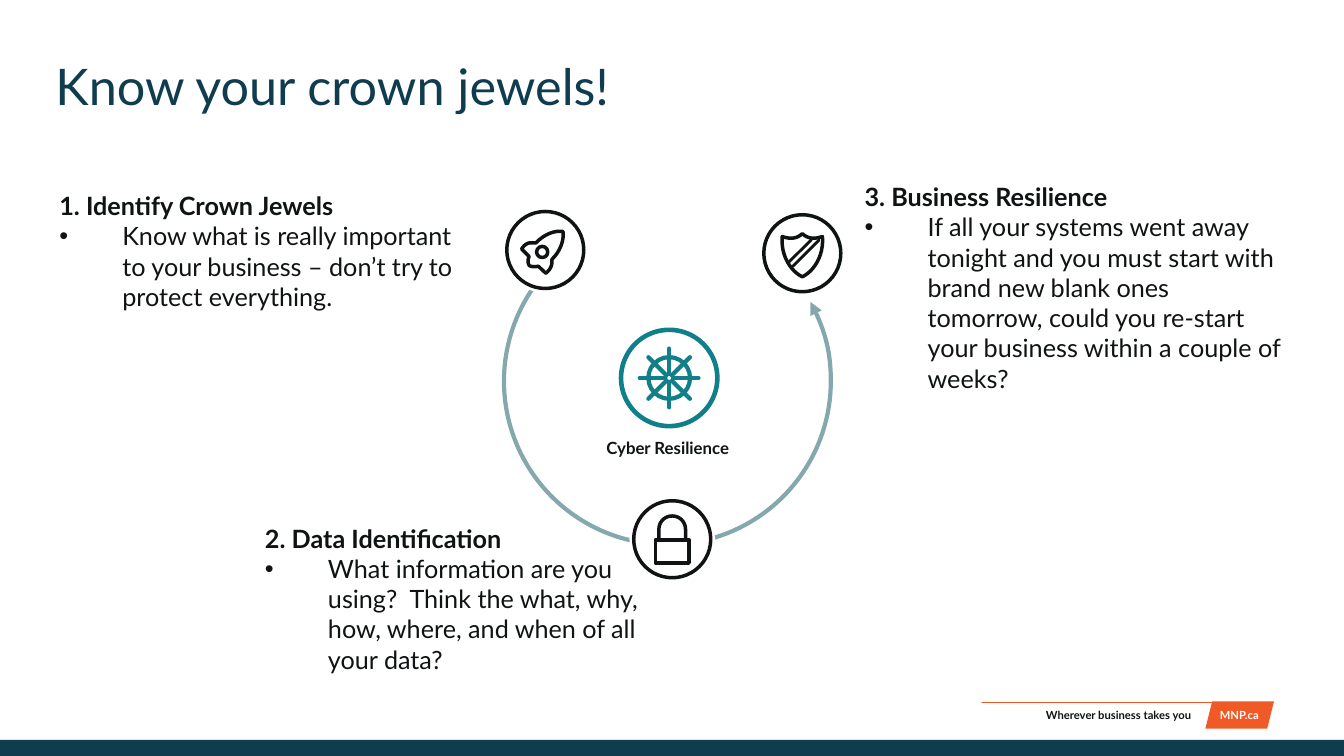
"""Builds the slide "Know your crown jewels!" with its cyber resilience cycle."""
import math

import lxml.etree
import pptx
import pptx.dml.color
import pptx.enum.shapes
import pptx.enum.text
import pptx.oxml.ns
import pptx.util

Pt = pptx.util.Pt
qn = pptx.oxml.ns.qn
SHAPE = pptx.enum.shapes.MSO_SHAPE
STRAIGHT = pptx.enum.shapes.MSO_CONNECTOR.STRAIGHT
ALIGN = pptx.enum.text.PP_ALIGN

NAVY = pptx.dml.color.RGBColor(0x0F, 0x3C, 0x4F)
INK = pptx.dml.color.RGBColor(0x0F, 0x13, 0x13)
ORANGE = pptx.dml.color.RGBColor(0xEF, 0x5A, 0x27)
TEAL = pptx.dml.color.RGBColor(0x10, 0x7F, 0x8A)
MIST = pptx.dml.color.RGBColor(0x85, 0xA8, 0xAE)
WHITE = pptx.dml.color.RGBColor(0xFF, 0xFF, 0xFF)

deck = pptx.Presentation()
deck.slide_width, deck.slide_height = Pt(960), Pt(540)
slide = deck.slides.add_slide(deck.slide_layouts[6])
shapes = slide.shapes


def paint(shape, fill=None, line=None, width=1):
    """Set fill and a round-capped line, and remove the shadow."""
    if hasattr(shape, "fill"):
        if fill is None:
            shape.fill.background()
        else:
            shape.fill.solid()
            shape.fill.fore_color.rgb = fill
    properties = shape._element.spPr
    if line is None:
        shape.line.fill.background()
    else:
        shape.line.color.rgb = line
        shape.line.width = Pt(width)
        outline = properties.find(qn("a:ln"))
        outline.set("cap", "rnd")
        lxml.etree.SubElement(outline, qn("a:round"))
    lxml.etree.SubElement(properties, qn("a:effectLst"))


def write(place, paragraphs, insets=(0, 0), align=ALIGN.LEFT, **font):
    """Add a text box; return its paragraphs."""
    frame = shapes.add_textbox(*map(Pt, place)).text_frame
    side, top = map(Pt, insets)
    layout = {"word_wrap": True, "margin_left": side, "margin_right": side,
              "margin_top": top, "margin_bottom": top}
    for name, value in layout.items():
        setattr(frame, name, value)
    frame.text = "\n".join(paragraphs)
    for paragraph in frame.paragraphs:
        paragraph.alignment = align
        run_font = paragraph.runs[0].font
        run_font.name = "Lato"
        run_font.color.rgb = font.get("color", INK)
        run_font.size = Pt(font["size"])
        run_font.bold = font.get("bold", False)
    return frame.paragraphs


site_tab = shapes.add_shape(SHAPE.PARALLELOGRAM, Pt(861), Pt(501), Pt(49), Pt(19.5))
paint(site_tab, ORANGE)
write((864, 502.5, 42.5, 17), ["MNP.ca"], (0, 3.6), ALIGN.CENTER,
      size=8, bold=True, color=WHITE)
footer_rule = shapes.add_connector(STRAIGHT, Pt(701.5), Pt(501.6), Pt(908.5), Pt(501.6))
paint(footer_rule, line=ORANGE)
write((703, 502.5, 148, 17), ["Wherever business takes you"], (0, 3.6), ALIGN.RIGHT,
      size=8, bold=True)
footer_bar = shapes.add_shape(SHAPE.RECTANGLE, 0, Pt(528.5), Pt(960), Pt(11.5))
paint(footer_bar, NAVY)

title = write((39.6, 44, 859, 44), ["Know your crown jewels!"], size=36, color=NAVY)
title[0].line_spacing = 0.9

cycle = shapes.add_shape(SHAPE.ARC, Pt(360), Pt(155.5), Pt(233.5), Pt(233.5))
for index, degrees in enumerate((331, 215)):
    cycle.adjustments[index] = degrees * 0.6
paint(cycle, line=MIST, width=3)
lxml.etree.SubElement(cycle._element.spPr.find(qn("a:ln")), qn("a:headEnd"), type="triangle")

ROCKET, SHIELD, LOCK, HELM = (389.5, 178.6), (573.1, 180.9), (480.2, 385.2), (478, 270)

discs = [(center, diameter, fill, line, width)
         for center in (ROCKET, SHIELD, LOCK)
         for diameter, fill, line, width in ((61.2, WHITE, None, 0), (55, None, INK, 2.5))]
discs += [
    ((ROCKET[0] - 2.2, ROCKET[1] + 1.4), 8, None, INK, 2.5),
    (HELM, 68.8, None, TEAL, 3.3),
    (HELM, 29.8, None, TEAL, 3),
]
for (x, y), diameter, fill, line, width in discs:
    disc = shapes.add_shape(SHAPE.OVAL, Pt(x - diameter / 2), Pt(y - diameter / 2),
                            Pt(diameter), Pt(diameter))
    paint(disc, fill, line, width)

# Each step is one line end, or two control points and a curve end.
icon_outlines = [
    (ROCKET, True, (0.4, 16.6), [
        [(-5, 11.5)],
        [(-5.8, 11.9), (-9.7, 12.2), (-11.2, 11.2)],
        [(-13, 9.4), (-12.2, 5.8), (-11.5, 4.7)],
        [(-16.9, -0.7)],
        [(-13.3, -6.5), (-9.4, -5), (-6.8, -5)],
        [(2.9, -14.8), (11.2, -13.3), (12.6, -13.3)],
        [(13, -11.5), (13.7, -2.2), (4.7, 6.8)],
        [(5, 8.6), (5, 13), (0.4, 16.6)]]),
    (SHIELD, True, (0, -14), [
        [(5.4, -9), (11, -11), (14.4, -11.9)],
        [(15.5, 2), (8, 13), (0, 16.8)],
        [(-8, 13), (-15.5, 2), (-14.4, -11.9)],
        [(-11, -11), (-5.4, -9), (0, -14)]]),
    (LOCK, False, (-9.5, 0.4), [
        [(-9.5, -7.2)],
        [(-9.5, -12.5), (-5.2, -16.6), (0, -16.6)],
        [(5.2, -16.6), (9.5, -12.5), (9.5, -7.2)],
        [(9.5, 0.4)]]),
]
for (x, y), closed, start, steps in icon_outlines:
    points = [start]
    for step in steps:
        if len(step) == 1:
            points += step
            continue
        corners = [points[-1], *step]
        for t in (n / 12 for n in range(1, 13)):
            weights = [math.comb(3, k) * t**k * (1 - t)**(3 - k) for k in range(4)]
            points.append(tuple(sum(w * c[axis] for w, c in zip(weights, corners))
                                for axis in (0, 1)))
    placed = [(Pt(x + dx), Pt(y + dy)) for dx, dy in points]
    builder = shapes.build_freeform(*placed[0], scale=1.0)
    builder.add_line_segments(placed[1:], close=closed)
    paint(builder.convert_to_shape(), line=INK, width=2.5)

lock_body = shapes.add_shape(SHAPE.RECTANGLE, Pt(LOCK[0] - 12), Pt(LOCK[1] + 0.4),
                             Pt(24), Pt(16.6))
paint(lock_body, line=INK, width=2.5)

strokes = [
    (SHIELD, (6.5, -9.7), (-9.4, 6.1), INK, 2),
    (SHIELD, (11.9, -9.4), (-6.8, 9.4), INK, 2),
]
for turn in range(4):
    dx, dy = (21 * f(turn * math.pi / 4) for f in (math.cos, math.sin))
    strokes.append((HELM, (dx, dy), (-dx, -dy), TEAL, 3))
for (x, y), (dx, dy), (end_dx, end_dy), color, width in strokes:
    stroke = shapes.add_connector(STRAIGHT, Pt(x + dx), Pt(y + dy),
                                  Pt(x + end_dx), Pt(y + end_dy))
    paint(stroke, line=color, width=width)
hub_hole = shapes.add_shape(SHAPE.OVAL, Pt(HELM[0] - 1.3), Pt(HELM[1] - 1.3), Pt(2.6), Pt(2.6))
paint(hub_hole, WHITE)
write((405, 312.5, 144, 14.4), ["Cyber Resilience"], align=ALIGN.CENTER, size=12, bold=True)

stages = [
    ((35.3, 132.5, 299, 117), "1. Identify Crown Jewels",
     "Know what is really important to your business – don’t try to protect everything."),
    ((182.2, 370, 299, 117), "2. Data Identification",
     "What information are you using?  Think the what, why, how, where, and when of all your data?"),
    ((610.5, 126, 314, 181), "3. Business Resilience",
     "If all your systems went away tonight and you must start with brand new blank ones "
     "tomorrow, could you re-start your business within a couple of weeks?"),
]
for place, heading, advice in stages:
    heading_line, advice_line = write(place, [heading, advice], (7.2, 3.6), size=18)
    heading_line.runs[0].font.bold = True
    bullet = advice_line._p.get_or_add_pPr()
    for name, value in {"marL": Pt(45), "indent": -Pt(45)}.items():
        bullet.set(name, str(value))
    lxml.etree.SubElement(bullet, qn("a:buFont"), typeface="Arial")
    lxml.etree.SubElement(bullet, qn("a:buChar"), char="•")

deck.save("out.pptx")
